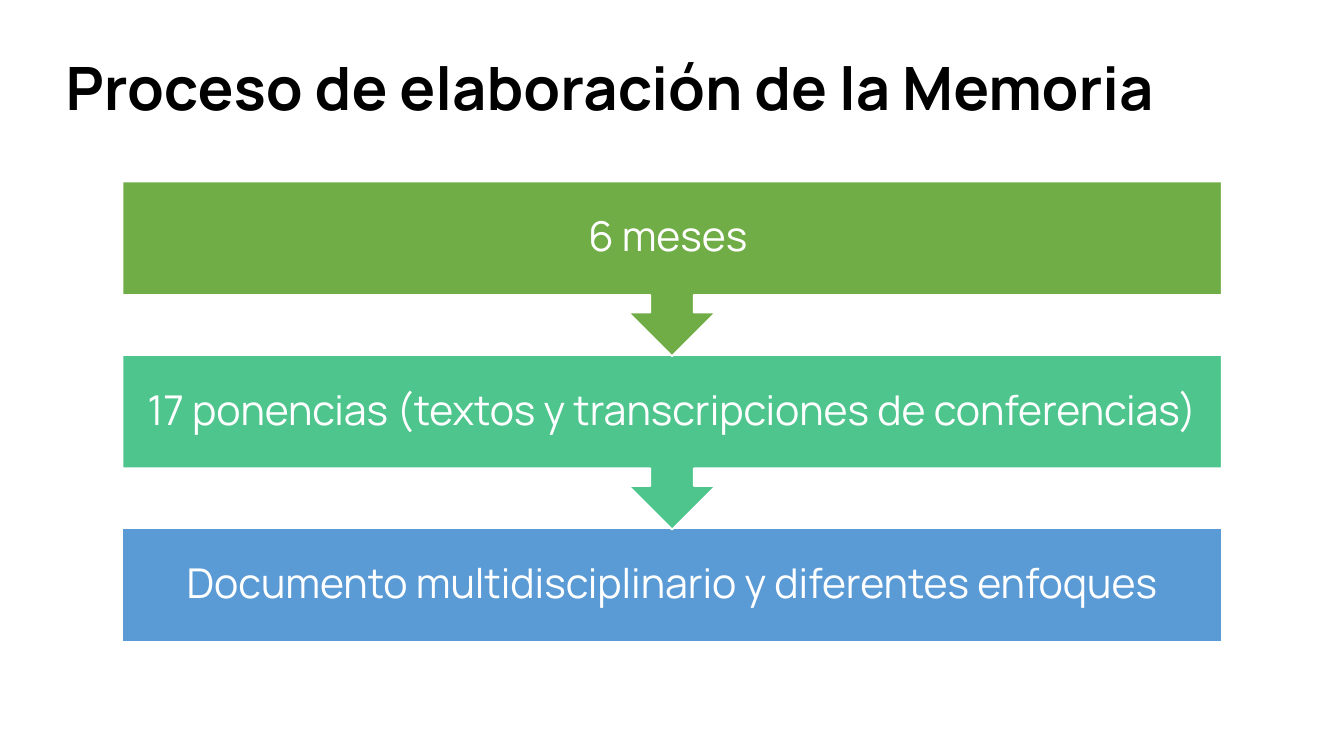
from pptx import Presentation
from pptx.dml.color import RGBColor
from pptx.enum.shapes import MSO_SHAPE
from pptx.enum.text import MSO_ANCHOR, PP_ALIGN
from pptx.util import Inches, Pt

TITLE = "Proceso de elaboración de la Memoria"
STEPS = [
    ("6 meses ", "green"),
    ("17 ponencias (textos y transcripciones de conferencias)", "mint"),
    ("Documento multidisciplinario y diferentes enfoques", "blue"),
]
COLORS = {"green": "70AD47", "mint": "4DC58D", "blue": "5B9BD5",
          "white": "FFFFFF", "black": "000000"}
FONT = "Manrope"
LEFT, TOP, WIDTH = 0.91, 1.35, 8.18
PITCH, BAR, CALLOUT = 1.29, 0.85, 1.3


def rgb(name):
    return RGBColor.from_string(COLORS[name])


def add_text(slide, box, text, size, color, align, pad=None, bold=False):
    frame = slide.shapes.add_textbox(*map(Inches, box)).text_frame
    frame.word_wrap = True
    frame.vertical_anchor = MSO_ANCHOR.MIDDLE
    if pad is not None:
        frame.margin_left = frame.margin_right = Inches(pad)
        frame.margin_top = frame.margin_bottom = Inches(pad)
    para = frame.paragraphs[0]
    para.text = text
    para.alignment = align
    para.line_spacing = 0.9
    para.font.name = FONT
    para.font.size = Pt(size)
    para.font.bold = bold
    para.font.color.rgb = rgb(color)


def add_step(slide, top, text, color, last):
    """Draw one bar; every bar but the last points down to the next."""
    kind = MSO_SHAPE.RECTANGLE if last else MSO_SHAPE.UP_ARROW_CALLOUT
    height = BAR if last else CALLOUT
    shape = slide.shapes.add_shape(
        kind, *map(Inches, (LEFT, top, WIDTH, height)))
    shape.rotation = 0 if last else 180
    shape.shadow.inherit = False
    shape.fill.solid()
    shape.fill.fore_color.rgb = rgb(color)
    shape.line.color.rgb = rgb("white")
    shape.line.width = Pt(1)
    add_text(slide, (LEFT, top, WIDTH, BAR), text, 22, "white",
             PP_ALIGN.CENTER, pad=0.17)


def main():
    deck = Presentation()
    deck.slide_width = Inches(10)
    deck.slide_height = deck.slide_width * 9 // 16
    slide = deck.slides.add_slide(deck.slide_layouts[6])
    add_text(slide, (0.39, 0.21, 8.62, 0.93), TITLE, 32, "black",
             PP_ALIGN.LEFT, bold=True)
    # Lowest bar first, so that each arrow lies over the bar below it
    for i, (text, color) in reversed(list(enumerate(STEPS))):
        add_step(slide, TOP + i * PITCH, text, color, i == len(STEPS) - 1)
    deck.save("out.pptx")


if __name__ == "__main__":
    main()
